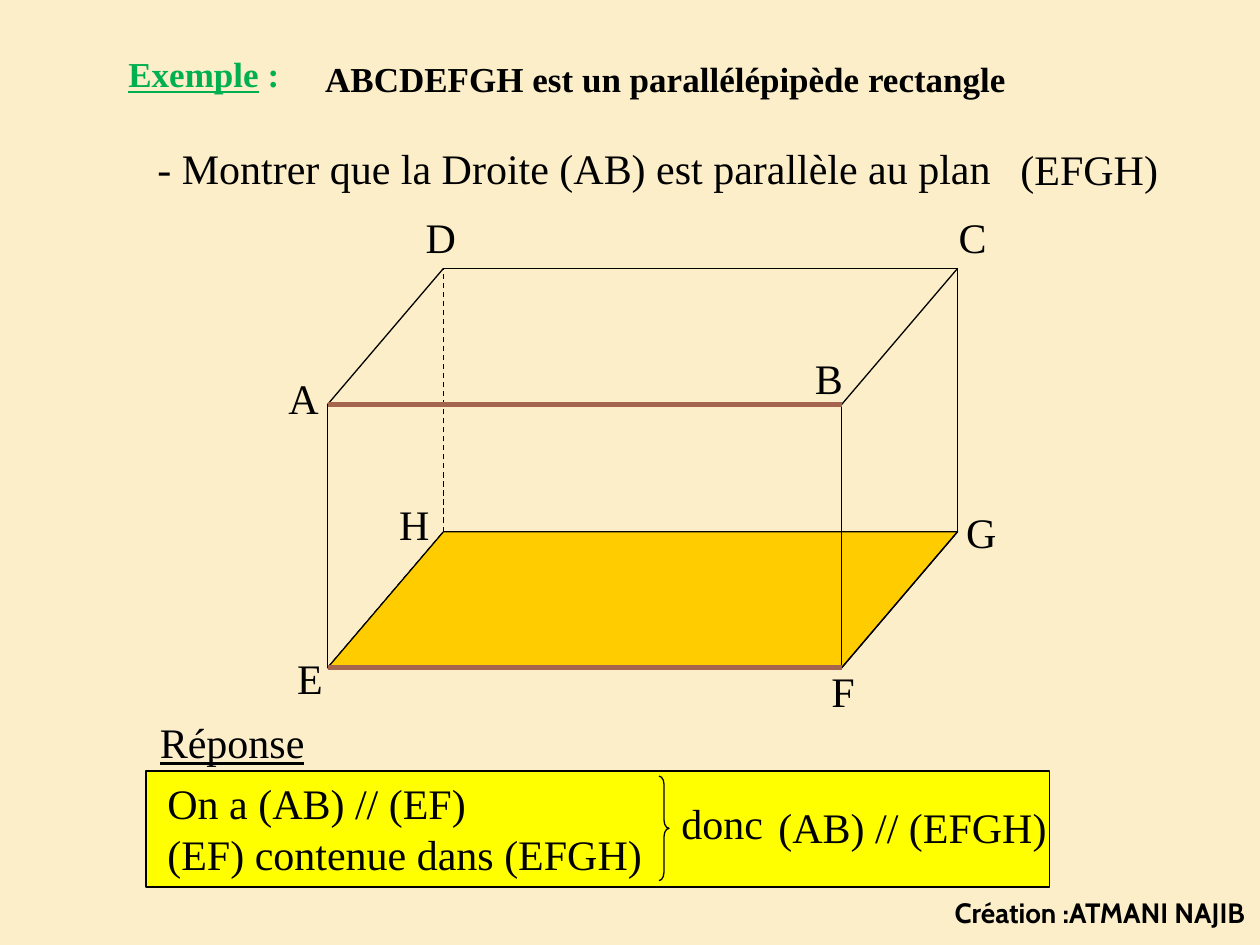
from lxml import etree
from pptx import Presentation
from pptx.dml.color import RGBColor
from pptx.enum import dml, shapes, text
from pptx.oxml.ns import qn
from pptx.util import Inches, Pt

SERIF = "Times New Roman"
BLACK, BROWN, GREEN = "000000", "A5644E", "00B050"
CREAM, YELLOW, GOLD = "FBEEC9", "FFFF00", "FFCC00"


def rgb(value):
    return RGBColor.from_string(value)


def write(sp, content, size=24, color=BLACK, bold=False, font=SERIF,
          align=text.PP_ALIGN.LEFT, wrap=False, underlined=""):
    """Fill a text shape; the underlined word, if any, comes first."""
    tf = sp.text_frame
    tf.word_wrap = wrap
    tf.vertical_anchor = text.MSO_ANCHOR.TOP
    tf.auto_size = text.MSO_AUTO_SIZE.SHAPE_TO_FIT_TEXT
    p = tf.paragraphs[0]
    p.alignment = align
    p.font.name, p.font.size, p.font.bold = font, Pt(size), bold
    p.font.color.rgb = rgb(color)
    if underlined:
        r = p.add_run()
        r.text = underlined
        r.font.underline = True
    r = p.add_run()
    r.text = content
    return p


def add_text(s, x, y, w, h, content, **style):
    sp = s.shapes.add_textbox(Inches(x), Inches(y), Inches(w), Inches(h))
    return write(sp, content, **style)


def add_shape(s, kind, x, y, w, h, fill=None):
    sp = s.shapes.add_shape(kind, Inches(x), Inches(y), Inches(w), Inches(h))
    sp.shadow.inherit = False
    if fill:
        sp.fill.solid()
        sp.fill.fore_color.rgb = rgb(fill)
    else:
        sp.fill.background()
    sp.line.color.rgb = rgb(BLACK)
    sp.line.width = Pt(0.75)
    return sp


def add_edge(s, start, end, color=BLACK, width=0.75, dashed=False):
    line = s.shapes.add_connector(shapes.MSO_CONNECTOR.STRAIGHT,
                                  *map(Inches, start + end))
    etree.SubElement(line._element.spPr, qn("a:effectLst"))
    line.line.color.rgb = rgb(color)
    line.line.width = Pt(width)
    if dashed:
        line.line.dash_style = dml.MSO_LINE.DASH


def add_heading(s, x, y):
    # Title
    title = s.shapes.title
    title.left, title.top = Inches(x + 1.56), Inches(y + 0.04)
    title.width, title.height = Inches(5.65), Inches(0.44)
    write(title, "ABCDEFGH est un parallélépipède rectangle", size=20, bold=True)
    # Example label and question
    add_text(s, x, y, 1.48, 0.44, " :", size=20, color=GREEN, bold=True,
             underlined="Exemple")
    add_text(s, x + 0.23, y + 0.71, 6.88, 0.5,
             "- Montrer que la Droite (AB) est parallèle au plan")
    add_text(s, x + 7.08, y + 0.72, 1.31, 0.5, "(EFGH)")


def add_solid(s, x, y, w, h, dx, dy):
    """Box in perspective: the back face is shifted by dx, dy."""
    right, bottom = x + w, y + h
    front, back = right - dx, x + dx
    points = {
        "A": (x, y + dy), "B": (front, y + dy),
        "C": (right, y), "D": (back, y),
        "E": (x, bottom), "F": (front, bottom),
        "G": (right, bottom - dy), "H": (back, bottom - dy),
    }

    def edges(names, **style):
        for a, b in names.split():
            add_edge(s, points[a], points[b], **style)

    # Hidden edges, base plane, visible edges, then the two parallels
    edges("HD GH EH", dashed=True)
    base = add_shape(s, shapes.MSO_SHAPE.PARALLELOGRAM,
                     x, bottom - dy, w, dy, GOLD)
    base.adjustments[0] = dx / dy
    edges("CD CG AE AD FG BC BF")
    edges("AB EF", color=BROWN, width=3)

    # Vertex labels, offset from their vertices
    offsets = {
        "A": (-0.41, -0.3), "B": (-0.31, -0.46),
        "C": (-0.09, -0.5), "D": (-0.24, -0.5),
        "E": (-0.34, -0.17), "F": (-0.18, -0.07),
        "G": (-0.03, -0.25), "H": (-0.45, -0.31),
    }
    for name, (ox, oy) in offsets.items():
        px, py = points[name]
        add_text(s, px + ox, py + oy, 0.43, 0.5, name)


def add_answer(s, x, y, w, h):
    add_text(s, x + 0.01, y - 0.48, 1.52, 0.5, " :", underlined="Réponse")
    add_shape(s, shapes.MSO_SHAPE.RECTANGLE, x, y, w, h, YELLOW)
    # Premises
    add_text(s, x + 0.07, y, 2.68, 0.5, "On a (AB) // (EF)", wrap=True)
    add_text(s, x + 0.07, y + 0.41, 4.68, 0.5,
             "(EF) contenue dans (EFGH)", wrap=True)
    # Brace and conclusion
    brace = add_shape(s, shapes.MSO_SHAPE.RIGHT_BRACE,
                      x + 4.07, y + 0.04, 0.08, h - 0.09)
    brace.adjustments[0] = 0.83
    add_text(s, x + 4.15, y + 0.16, 0.85, 0.5, "donc")
    add_text(s, x + 4.92, y + 0.19, 2.33, 0.5, "(AB) // (EFGH)")


def add_credit(s, x, y, w, h):
    p = add_text(s, x, y, w, h, "Création :ATMANI NAJIB", size=16, bold=True,
                 font="Cabin", align=text.PP_ALIGN.RIGHT, wrap=True)
    p.space_before = Pt(8)


def main():
    prs = Presentation()
    prs.slide_width, prs.slide_height = Inches(10), Inches(7.5)
    s = prs.slides.add_slide(prs.slide_layouts[5])
    s.background.fill.solid()
    s.background.fill.fore_color.rgb = rgb(CREAM)

    add_heading(s, 0.92, 0.37)
    add_solid(s, 2.6, 2.13, 5, 3.17, 0.92, 1.08)
    add_answer(s, 1.16, 6.12, 7.17, 0.92)
    add_credit(s, 6.9, 7.06, 3.08, 0.37)
    prs.save("out.pptx")


if __name__ == "__main__":
    main()
